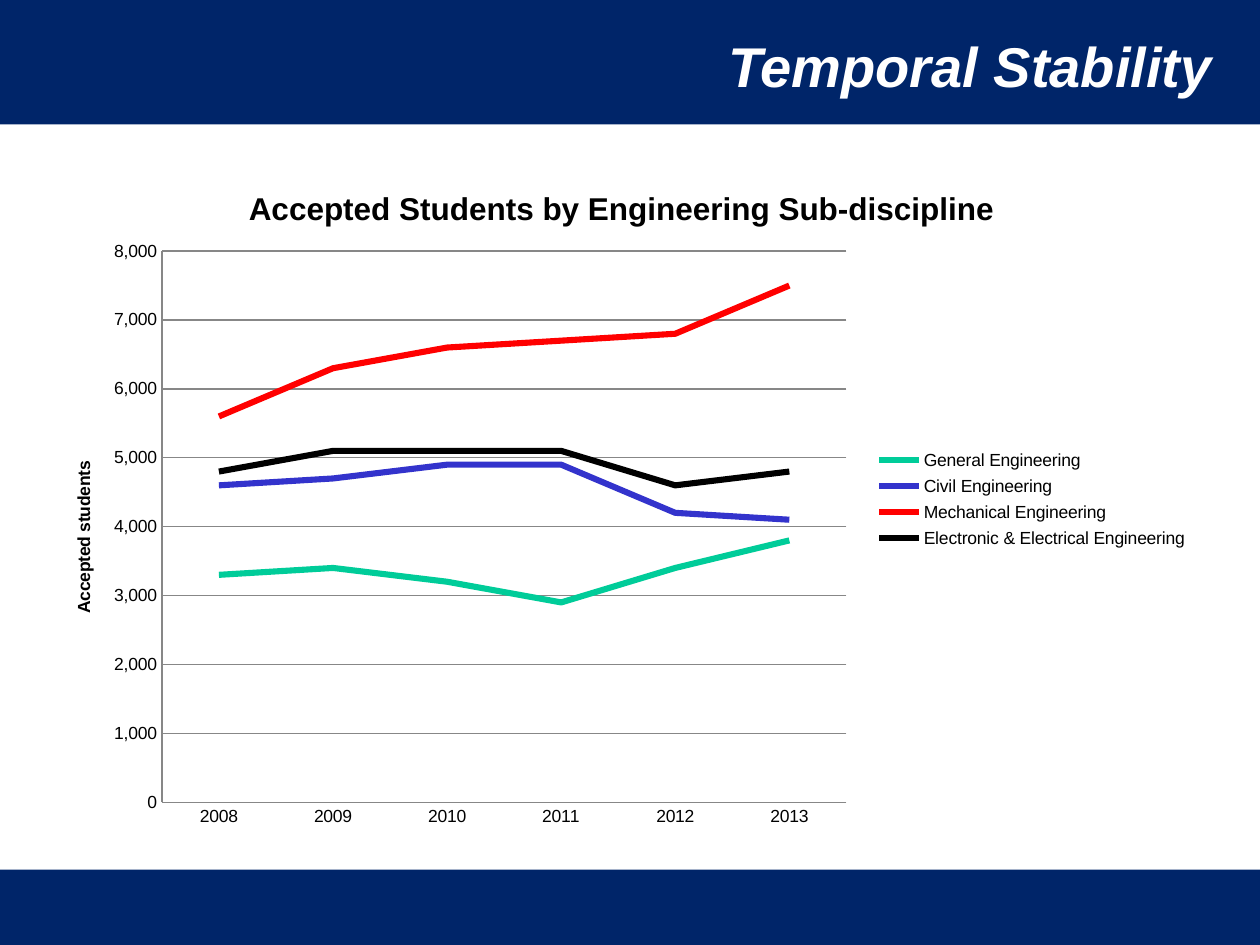
from lxml import etree
from pptx import Presentation, util as u
from pptx.chart.data import CategoryChartData
from pptx.dml.color import RGBColor
from pptx.enum import chart as charts, shapes, text
from pptx.oxml.ns import qn

FONT = "Arial"
NAVY, WHITE, BLACK, GRAY = "002569", "FFFFFF", "000000", "878787"
WIDTH, HEIGHT = 25.4, 19.05
BANDS = [(0, 2.51), (17.53, 1.52)]
TITLE = "Temporal Stability"
CHART_TITLE = "Accepted Students by Engineering Sub-discipline"
AXIS_TITLE = "Accepted students"
YEARS = ["2008", "2009", "2010", "2011", "2012", "2013"]
SERIES = [
    ("General Engineering", "00CC99", [3300, 3400, 3200, 2900, 3400, 3800]),
    ("Civil Engineering", "3333CC", [4600, 4700, 4900, 4900, 4200, 4100]),
    ("Mechanical Engineering", "FF0000", [5600, 6300, 6600, 6700, 6800, 7500]),
    ("Electronic & Electrical Engineering", BLACK, [4800, 5100, 5100, 5100, 4600, 4800]),
]


def color(value):
    return RGBColor.from_string(value)


def set_font(font, size, value, bold=False, italic=False):
    font.name, font.size = FONT, u.Pt(size)
    font.bold, font.italic = bold, italic
    font.color.rgb = color(value)


def set_line(line, value, width):
    line.color.rgb = color(value)
    line.width = u.Pt(width)


def set_layout(element, index, inner=False, **place):
    for old in element.findall(qn("c:layout")):
        element.remove(old)
    layout = etree.Element(qn("c:layout"))
    manual = etree.SubElement(layout, qn("c:manualLayout"))
    settings = [("layoutTarget", "inner")] if inner else []
    settings += [("xMode", "edge"), ("yMode", "edge"), *place.items()]
    for name, value in settings:
        etree.SubElement(manual, qn(f"c:{name}")).set("val", str(value))
    element.insert(index, layout)


def set_title(owner, words, size, x, y):
    title = owner.title if hasattr(owner, "title") else owner.axis_title
    paragraph = title.text_frame.paragraphs[0]
    paragraph.text = words
    set_font(paragraph.font, size, BLACK, bold=True)
    return title


def add_bands(slide):
    for top, height in BANDS:
        band = slide.shapes.add_shape(
            shapes.MSO_SHAPE.RECTANGLE, 0, u.Cm(top), u.Cm(WIDTH), u.Cm(height))
        band.shadow.inherit = False
        band.fill.solid()
        band.fill.fore_color.rgb = color(NAVY)
        band.line.fill.background()


def add_heading(slide):
    box = slide.shapes.add_textbox(u.Cm(7.49), u.Cm(-0.18), u.Cm(17.2), u.Cm(2.97))
    frame = box.text_frame
    frame.word_wrap = True
    frame.vertical_anchor = text.MSO_ANCHOR.MIDDLE
    paragraph = frame.paragraphs[0]
    paragraph.text = TITLE
    paragraph.alignment = text.PP_ALIGN.RIGHT
    set_font(paragraph.font, 32, WHITE, bold=True, italic=True)


def label(title, words, size, x, y):
    paragraph = title.text_frame.paragraphs[0]
    paragraph.text = words
    set_font(paragraph.font, size, BLACK, bold=True)
    set_layout(title._element, 1, x=x, y=y)


def add_line_chart(slide):
    data = CategoryChartData(number_format="#,##0")
    data.categories = YEARS
    for name, _, values in SERIES:
        data.add_series(name, values)
    chart = slide.shapes.add_chart(
        charts.XL_CHART_TYPE.LINE, u.Cm(0.69), u.Cm(3.12), u.Cm(23.39), u.Cm(13.89), data).chart
    set_font(chart.font, 10, BLACK)
    chart.has_title = True
    label(chart.chart_title, CHART_TITLE, 18, 0.18, 0.04)
    set_layout(chart._chartSpace.chart.plotArea, 0, inner=True, x=0.11, y=0.14, w=0.59, h=0.8)

    plot = chart.plots[0]
    plot.vary_by_categories = False
    for series, (_, value, _) in zip(plot.series, SERIES):
        series.smooth = False
        series.marker.style = charts.XL_MARKER_STYLE.NONE
        set_line(series.format.line, value, 3.5)

    for axis in (chart.category_axis, chart.value_axis):
        axis.major_tick_mark = axis.minor_tick_mark = charts.XL_TICK_MARK.NONE
        set_line(axis.format.line, GRAY, 0.75)
    axis = chart.value_axis
    axis.minimum_scale, axis.maximum_scale, axis.major_unit = 0, 8000, 1000
    axis.tick_labels.number_format = "#,##0"
    axis.tick_labels.number_format_is_linked = False
    axis.has_major_gridlines = True
    set_line(axis.major_gridlines.format.line, GRAY, 0.75)
    axis.has_title = True
    label(axis.axis_title, AXIS_TITLE, 10, 0.03, 0.44)
    body = axis.axis_title.text_frame._txBody.find(qn("a:bodyPr"))
    body.set("rot", "-5400000")
    body.set("vert", "horz")

    chart.has_legend = True
    chart.legend.position = charts.XL_LEGEND_POSITION.RIGHT
    chart.legend.include_in_layout = False
    set_font(chart.legend.font, 10, BLACK)
    set_layout(chart.legend._element, 1, x=0.72, y=0.42, w=0.28, h=0.16)


def main():
    presentation = Presentation()
    presentation.slide_width, presentation.slide_height = u.Cm(WIDTH), u.Cm(HEIGHT)
    slide = presentation.slides.add_slide(presentation.slide_layouts[6])
    add_bands(slide)
    add_heading(slide)
    add_line_chart(slide)
    presentation.save("out.pptx")


if __name__ == "__main__":
    main()
